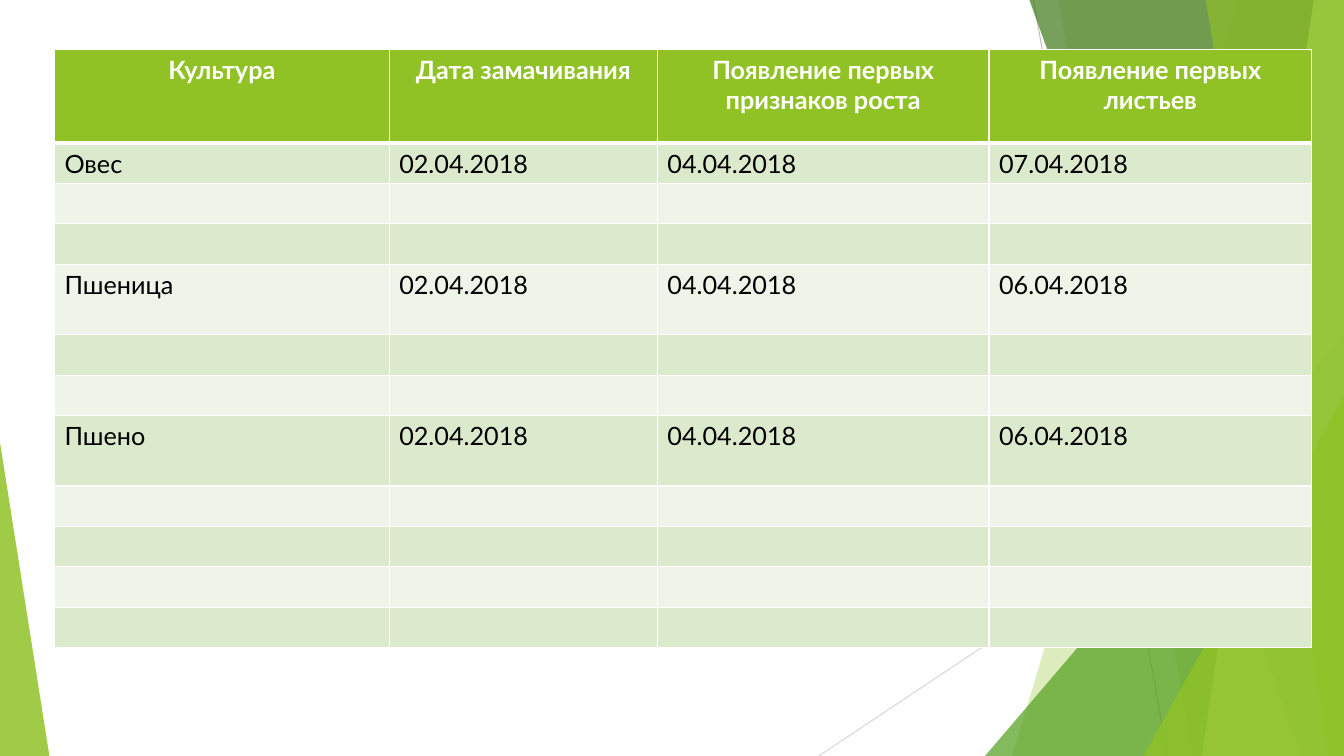
"""Build a slide with a table of seed sprouting dates over green facets."""
import lxml.etree
import pptx
import pptx.dml.color
import pptx.enum.shapes
import pptx.enum.text
import pptx.oxml.ns
import pptx.util
from dataclasses import dataclass

Inches = pptx.util.Inches
qn = pptx.oxml.ns.qn


@dataclass(frozen=True)
class Theme:
    font: str = "Lato"
    size: int = 18
    green: str = "90C226"
    leaf: str = "54A021"
    forest: str = "3F7819"
    lime: str = "C0E474"
    white: str = "FFFFFF"
    ink: str = "000000"
    band_dark: str = "DBE9CD"
    band_light: str = "EEF4E8"
    grid: float = 1
    header_rule: float = 3


THEME = Theme()
WIDTH, HEIGHT = 13.33, 7.5

HEADER = ["Культура", "Дата замачивания", "Появление первых признаков роста", "Появление первых листьев"]
CROPS = {
    1: ["Овес", "02.04.2018", "04.04.2018", "07.04.2018"],
    4: ["Пшеница", "02.04.2018", "04.04.2018", "06.04.2018"],
    7: ["Пшено", "02.04.2018", "04.04.2018", "06.04.2018"],
}
TABLE_LEFT, TABLE_TOP = 0.54, 0.49
COLUMN_WIDTHS = [3.32, 2.66, 3.29, 3.2]
ROW_COUNT, ROW_HEIGHT = 12, 0.4
TALL_ROWS = {0: 0.93, 4: 0.7, 7: 0.7}

RAYS = [
    ((10.25, 0), (11.58, HEIGHT), "BFBFBF"),
    ((WIDTH, 4.03), (8.12, HEIGHT), "D9D9D9"),
]
FACETS = [
    ("band", (12.28, 10.04), THEME.green, 30),
    ("band", (10.5, 11.83), THEME.green, 20),
    ("triangle", (9.77, 3.33, 3.56, 1), THEME.leaf, 72),
    ("band", (10.21, 12.91), THEME.forest, 70),
    ("band", (13.03, 11.92), THEME.lime, 70),
    ("band", (11.96, 13.18), THEME.green, 65),
    ("triangle", (11.34, 3.93, 1.99, 1), THEME.green, 80),
    ("triangle", (0, 4.39, 0.49, 0), THEME.green, 85),
]


def rgb(code):
    return pptx.dml.color.RGBColor.from_string(code)


def add_ray(slide, start, end, color):
    ray = slide.shapes.add_connector(
        pptx.enum.shapes.MSO_CONNECTOR.STRAIGHT, *map(Inches, start + end))
    ray.line.color.rgb = rgb(color)
    ray.line.width = pptx.util.Pt(0.75)
    lxml.etree.SubElement(ray._element.spPr, qn("a:effectLst"))


def add_band(slide, top_x, bottom_x):
    corners = [(WIDTH, 0), (WIDTH, HEIGHT), (bottom_x, HEIGHT)]
    outline = slide.shapes.build_freeform(Inches(top_x), 0)
    outline.add_line_segments([(Inches(x), Inches(y)) for x, y in corners])
    return outline.convert_to_shape()


def add_triangle(slide, left, top, width, apex):
    triangle = slide.shapes.add_shape(
        pptx.enum.shapes.MSO_SHAPE.ISOSCELES_TRIANGLE,
        *map(Inches, (left, top, width, HEIGHT - top)))
    triangle.adjustments[0] = apex
    return triangle


def add_facet(slide, kind, geometry, color, opacity):
    facet = {"band": add_band, "triangle": add_triangle}[kind](slide, *geometry)
    facet.shadow.inherit = False
    facet.line.fill.background()
    facet.fill.solid()
    facet.fill.fore_color.rgb = rgb(color)
    tint = facet._element.spPr.find(qn("a:solidFill")).find(qn("a:srgbClr"))
    lxml.etree.SubElement(tint, qn("a:alpha"), val=str(opacity * 1000))


def set_borders(cell, row):
    properties = cell._tc.get_or_add_tcPr()
    widths = {"lnL": THEME.grid, "lnR": THEME.grid,
              "lnT": THEME.header_rule if row == 1 else THEME.grid,
              "lnB": THEME.header_rule if row == 0 else THEME.grid}
    for position, (side, width) in enumerate(widths.items()):
        border = lxml.etree.Element(qn(f"a:{side}"), w=str(pptx.util.Pt(width)))
        fill = lxml.etree.SubElement(border, qn("a:solidFill"))
        lxml.etree.SubElement(fill, qn("a:srgbClr"), val=THEME.white)
        properties.insert(position, border)


def format_cell(cell, row, wording):
    header = row == 0
    band = THEME.band_dark if row % 2 else THEME.band_light
    cell.fill.solid()
    cell.fill.fore_color.rgb = rgb(THEME.green if header else band)
    set_borders(cell, row)
    cell.text = wording
    paragraph = cell.text_frame.paragraphs[0]
    if header:
        paragraph.alignment = pptx.enum.text.PP_ALIGN.CENTER
    paragraph.font.name = THEME.font
    paragraph.font.size = pptx.util.Pt(THEME.size)
    paragraph.font.bold = header
    paragraph.font.color.rgb = rgb(THEME.white if header else THEME.ink)


def add_dates(slide):
    heights = [TALL_ROWS.get(row, ROW_HEIGHT) for row in range(ROW_COUNT)]
    dates = slide.shapes.add_table(
        ROW_COUNT, len(HEADER), Inches(TABLE_LEFT), Inches(TABLE_TOP),
        Inches(sum(COLUMN_WIDTHS)), Inches(sum(heights))).table
    for column, width in zip(dates.columns, COLUMN_WIDTHS):
        column.width = Inches(width)
    wordings = {0: HEADER, **CROPS}
    for row, height in enumerate(heights):
        dates.rows[row].height = Inches(height)
        for column, wording in enumerate(wordings.get(row, [""] * len(HEADER))):
            format_cell(dates.cell(row, column), row, wording)


def main():
    presentation = pptx.Presentation()
    presentation.slide_width, presentation.slide_height = Inches(WIDTH), Inches(HEIGHT)
    slide = presentation.slides.add_slide(presentation.slide_layouts[6])
    slide.background.fill.solid()
    slide.background.fill.fore_color.rgb = rgb(THEME.white)
    for ray in RAYS:
        add_ray(slide, *ray)
    for facet in FACETS:
        add_facet(slide, *facet)
    add_dates(slide)
    presentation.save("out.pptx")


if __name__ == "__main__":
    main()
